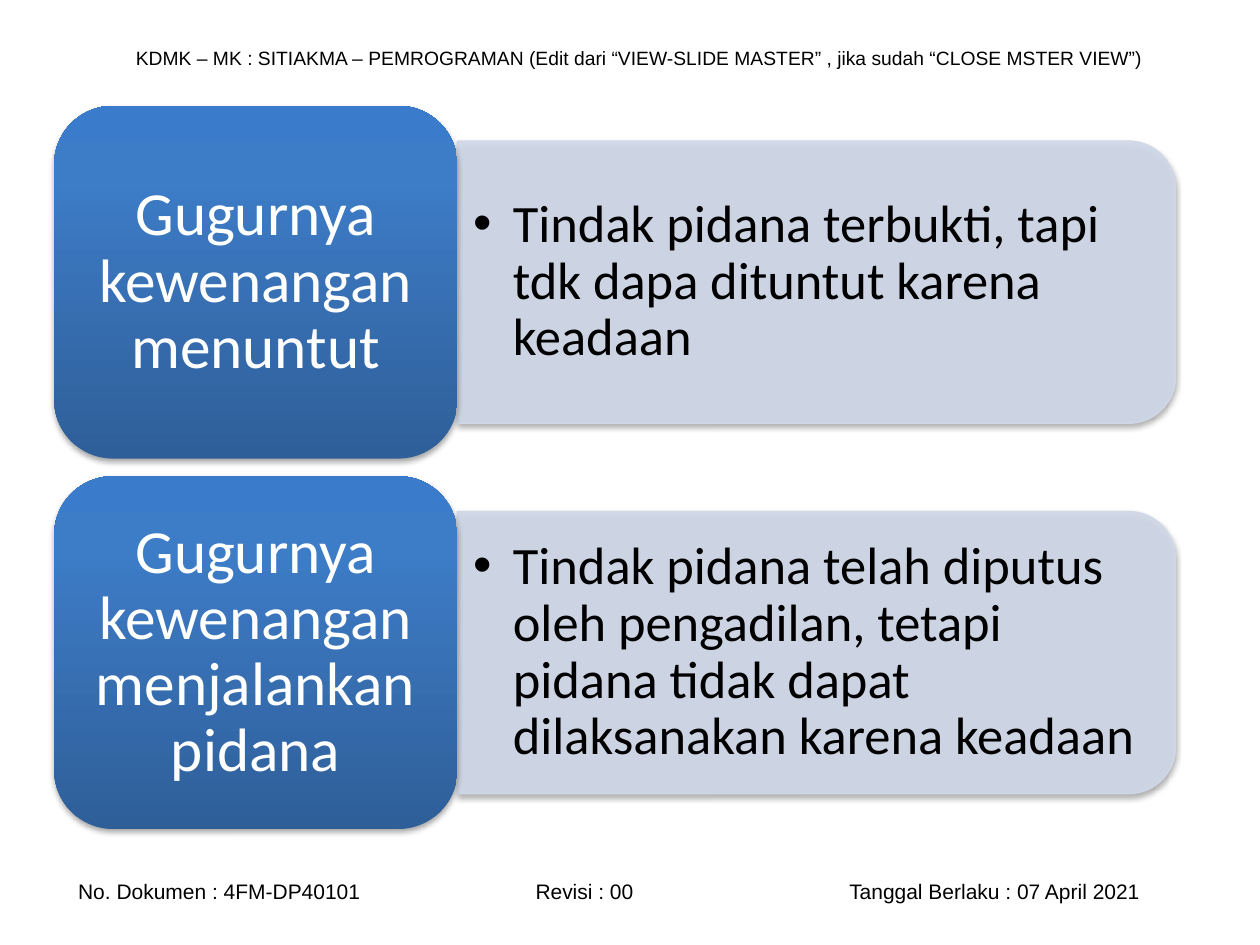
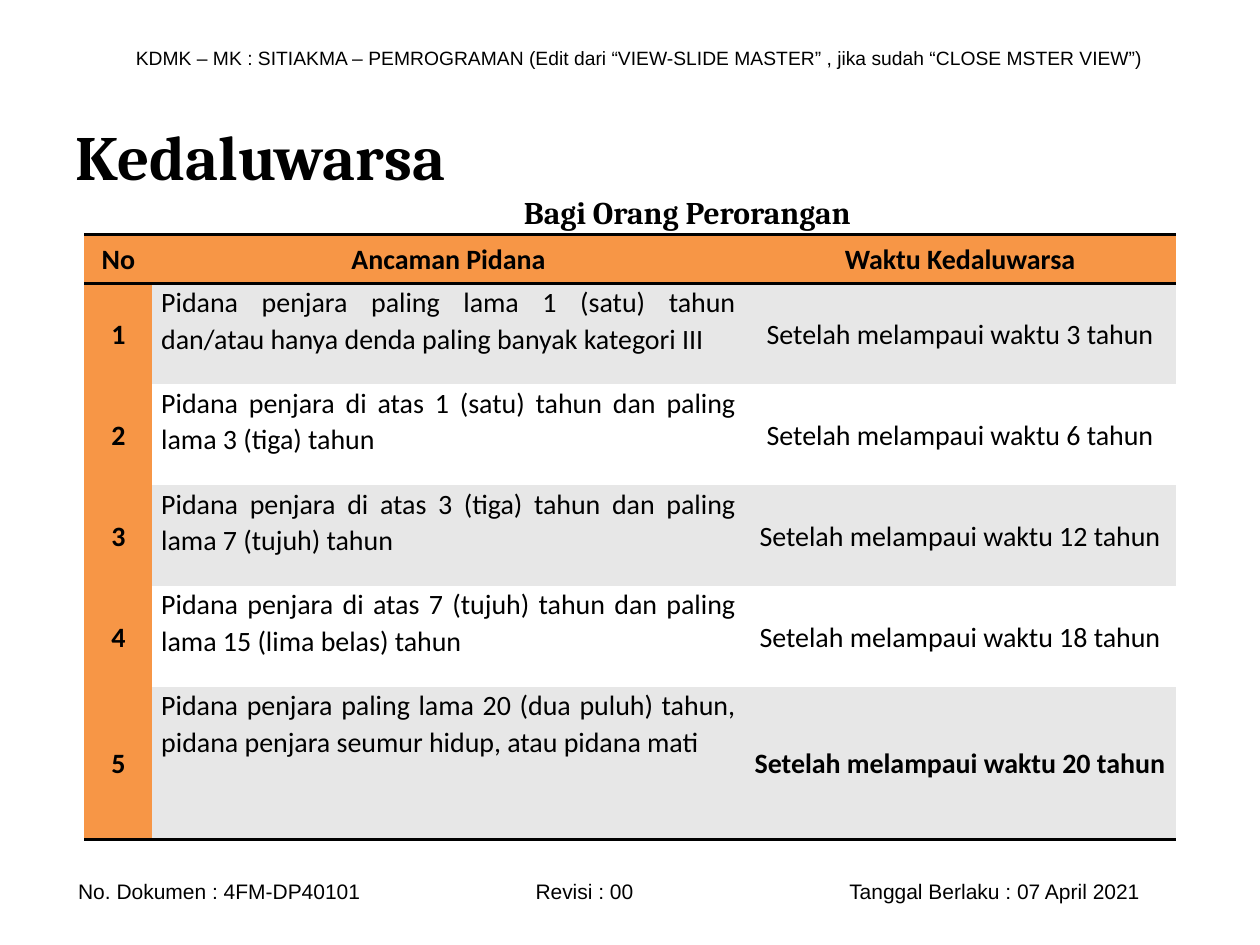
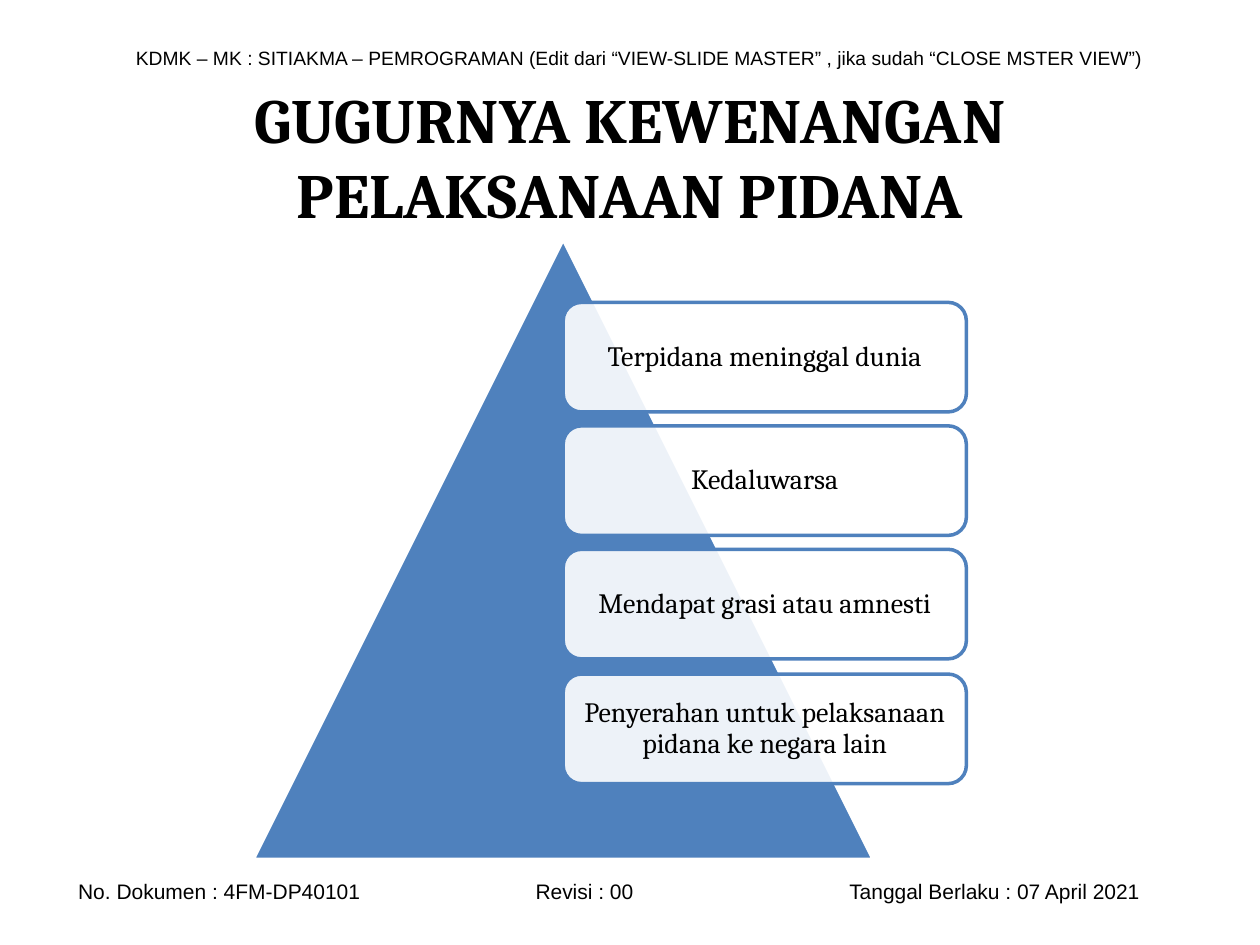
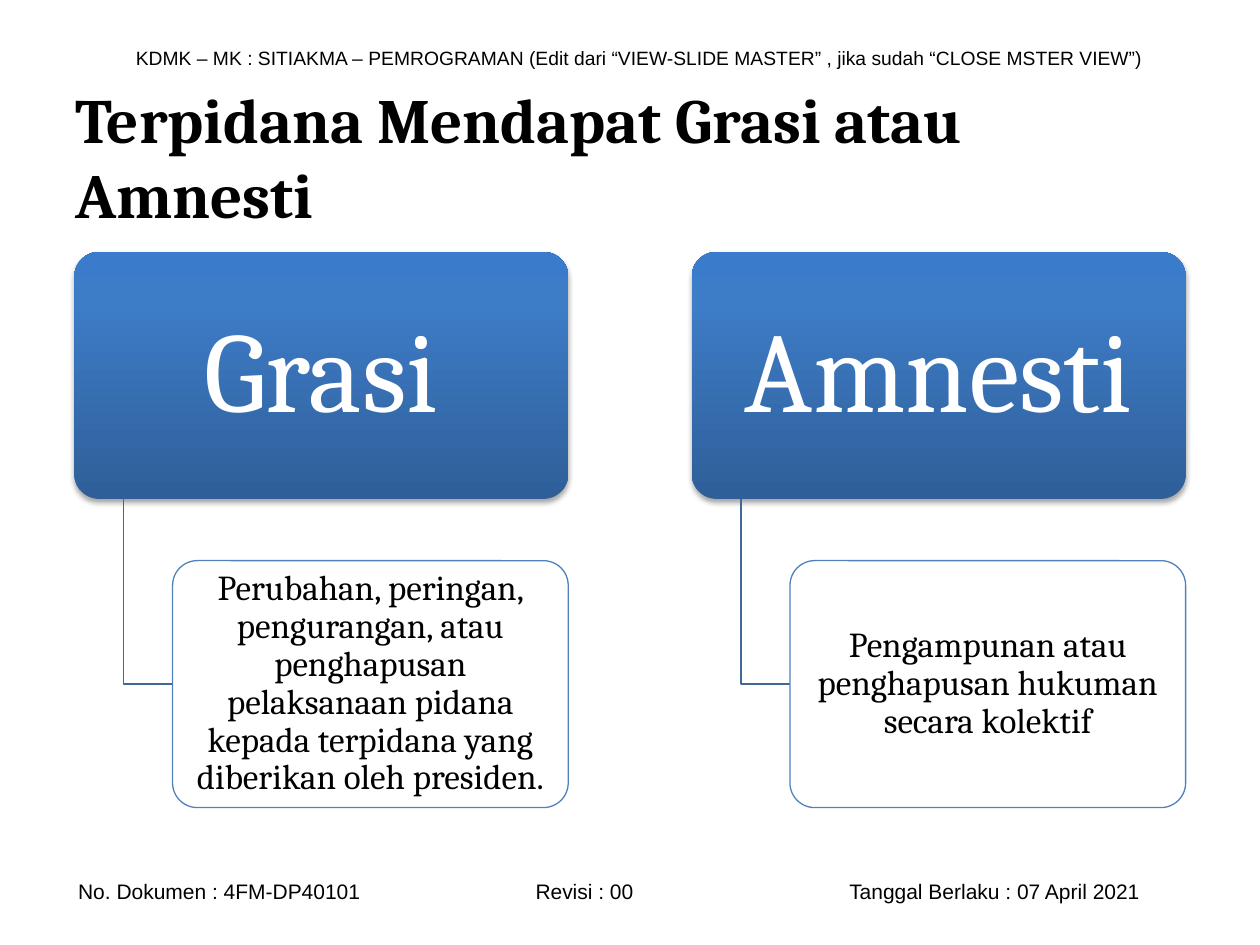
from copy import deepcopy

from lxml import etree
from pptx import Presentation
from pptx import util as u
from pptx.dml.color import RGBColor
from pptx.enum import shapes, text
from pptx.oxml.ns import qn

EMU_PER_PX = 9144
BLACK, WHITE, BLUE, PALE = "000000", "FFFFFF", "4F81BD", "D0D8E8"
ELBOW_BLUE, ORANGE, GREY = "3F6797", "F79646", "E7E7E7"
GRADIENT = ((0, "2F5F99"), (0.8, "3D7CC7"), (1, "3A7CCB"))
NO_STYLE = "{2D5ABB26-0587-4C30-8999-92F81FD0307C}"
LEFT, CENTER, JUSTIFY = text.PP_ALIGN.LEFT, text.PP_ALIGN.CENTER, text.PP_ALIGN.JUSTIFY
MIDDLE, TOP = text.MSO_ANCHOR.MIDDLE, text.MSO_ANCHOR.TOP
ROUNDED = shapes.MSO_SHAPE.ROUNDED_RECTANGLE
TITLE = {"size": 36, "name": "Cambria", "bold": True}

HEADER = "KDMK – MK : SITIAKMA – PEMROGRAMAN (Edit dari “VIEW-SLIDE MASTER” , jika sudah “CLOSE MSTER VIEW”)"
FOOTER = ("No. Dokumen : 4FM-DP40101", "Revisi : 00", "Tanggal Berlaku : 07 April 2021")
FOOTER_TABS = (363, 612)

AUTHORITIES = (
    ("Gugurnya kewenangan menuntut",
     "Tindak pidana terbukti, tapi tdk dapa dituntut karena keadaan"),
    ("Gugurnya kewenangan menjalankan pidana",
     "Tindak pidana telah diputus oleh pengadilan, tetapi pidana tidak dapat dilaksanakan karena keadaan"),
)
EXPIRY_HEADINGS = ("No", "Ancaman Pidana", "Waktu Kedaluwarsa")
EXPIRY_TERMS = (
    ("Pidana penjara paling lama 1 (satu) tahun dan/atau hanya denda paling banyak kategori III", 3),
    ("Pidana penjara di atas 1 (satu) tahun dan paling lama 3 (tiga) tahun", 6),
    ("Pidana penjara di atas 3 (tiga) tahun dan paling lama 7 (tujuh) tahun", 12),
    ("Pidana penjara di atas 7 (tujuh) tahun dan paling lama 15 (lima belas) tahun", 18),
    ("Pidana penjara paling lama 20 (dua puluh) tahun, pidana penjara seumur hidup, atau pidana mati", 20),
)
GROUNDS = ("Terpidana meninggal dunia", "Kedaluwarsa", "Mendapat grasi atau amnesti",
           "Penyerahan untuk pelaksanaan pidana ke negara lain")
PARDONS = (
    ("Grasi", "Perubahan, peringan, pengurangan, atau penghapusan pelaksanaan pidana "
              "kepada terpidana yang diberikan oleh presiden."),
    ("Amnesti", "Pengampunan atau penghapusan hukuman secara kolektif"),
)


def px(value):
    return u.Emu(value * EMU_PER_PX)


def rgb(color):
    return RGBColor.from_string(color)


def add_element(parent, tag, **attributes):
    return etree.SubElement(parent, qn(tag), {key: str(value) for key, value in attributes.items()})


def write_text(target, words, font, color=BLACK, align=LEFT, anchor=MIDDLE, insets=(10, 5, 10, 5), spacing=None):
    frame = getattr(target, "text_frame", target)
    frame.word_wrap = True
    target.vertical_anchor = anchor
    for side, inset in zip(("left", "top", "right", "bottom"), insets):
        setattr(target, f"margin_{side}", px(inset))
    paragraph = frame.paragraphs[0]
    for name, value in {"alignment": align, **(spacing or {})}.items():
        setattr(paragraph, name, value)
    run = paragraph.add_run()
    run.text = words
    for name, value in {**font, "size": u.Pt(font["size"])}.items():
        setattr(run.font, name, value)
    run.font.color.rgb = rgb(color)
    return paragraph


def add_text(slide, box, words, font, **layout):
    shape = slide.shapes.add_textbox(*map(px, box))
    paragraph = write_text(shape.text_frame, words, font, **layout)
    return shape, paragraph


def set_line(shape, color, width):
    if color is None:
        shape.line.fill.background()
    else:
        shape.line.color.rgb = rgb(color)
        shape.line.width = u.Pt(width)


def add_preset(slide, kind, box, fill, line=None, width=0.75, alpha=None):
    shape = slide.shapes.add_shape(kind, *map(px, box))
    shape.shadow.inherit = False
    shape.fill.solid()
    shape.fill.fore_color.rgb = rgb(fill)
    if alpha:
        add_element(shape.element.spPr.find(qn("a:solidFill"))[0], "a:alpha", val=alpha * 1000)
    set_line(shape, line, width)
    return shape


def add_shadow(shape):
    effects = shape.element.spPr.find(qn("a:effectLst"))
    shadow = add_element(effects, "a:outerShdw", blurRad=40000, dist=23000, dir=5400000, rotWithShape=0)
    add_element(add_element(shadow, "a:srgbClr", val=BLACK), "a:alpha", val=35000)


def add_glossy_box(slide, box, words, font, insets):
    shape = add_preset(slide, ROUNDED, box, BLUE)
    shape.fill.gradient()
    shape.fill.gradient_angle = 90
    stop_list = shape.element.spPr.find(f".//{qn('a:gsLst')}")
    stop_list.append(deepcopy(stop_list[0]))
    for stop, (position, color) in zip(shape.fill.gradient_stops, GRADIENT):
        stop.position = position
        stop.color.rgb = rgb(color)
    add_shadow(shape)
    write_text(shape.text_frame, words, font, color=WHITE, align=CENTER, insets=insets,
               spacing={"line_spacing": 0.9})
    return shape


def add_outlined_box(slide, box, words, size, width, insets):
    shape = add_preset(slide, ROUNDED, box, WHITE, BLUE, width, alpha=90)
    write_text(shape.text_frame, words, {"size": size, "name": "Cambria"}, align=CENTER, insets=insets,
               spacing={"line_spacing": 0.9})
    return shape


def add_title(slide, words, align=LEFT):
    add_text(slide, (50, 61, 900, 125), words, TITLE, align=align)


def add_page_bands(slide, layout):
    header, _ = add_text(slide, (98, 31, 835, 29), HEADER, {"size": 11, "name": "Arial"})
    footer, paragraph = add_text(slide, (20, 692, 945, 30), "\t".join(FOOTER), {"size": 12, "name": "Arial"},
                                 insets=(42, 5, 10, 5))
    tabs = add_element(paragraph._p.get_or_add_pPr(), "a:tabLst")
    for position in FOOTER_TABS:
        add_element(tabs, "a:tab", pos=px(position), algn="l")
    for band in (header, footer):
        layout.shapes.element.append(band.element)


def add_authority(slide, left, top, name, meaning):
    bar_left, bar_top, bar_width, bar_height = left + 320, top + 28, 570, 224
    shift = (bar_width - bar_height) // 2
    bar = add_preset(slide, shapes.MSO_SHAPE.ROUND_2_SAME_RECTANGLE,
                     (bar_left + shift, bar_top - shift, bar_height, bar_width), PALE, PALE, alpha=90)
    bar.rotation = 90
    add_shadow(bar)
    _, paragraph = add_text(slide, (bar_left + 1, bar_top + 11, 559, 202), meaning,
                            {"size": 30, "name": "Calibri"}, insets=(12, 6, 12, 6),
                            spacing={"line_spacing": 0.9})
    properties = paragraph._p.get_or_add_pPr()
    properties.set("marL", str(px(31)))
    properties.set("indent", str(px(-31)))
    add_element(properties, "a:buFont", typeface="Arial")
    add_element(properties, "a:buChar", char="•")
    add_glossy_box(slide, (left, top, 320, 280), name, {"size": 35, "name": "Calibri"}, (15, 7, 15, 7))


def build_authorities(slide):
    for index, (name, meaning) in enumerate(AUTHORITIES):
        add_authority(slide, 43, 84 + 294 * index, name, meaning)


def format_cell(cell, words, fill, bold, borders, align=CENTER, anchor=MIDDLE):
    write_text(cell, words, {"size": 16, "name": "Calibri", "bold": bold}, align=align, anchor=anchor,
               insets=(7, 0, 7, 0), spacing={"line_spacing": 1.07, "space_after": u.Pt(8)})
    properties = cell._tc.get_or_add_tcPr()
    for tag in borders:
        border = add_element(properties, tag, w=u.Pt(2))
        add_element(add_element(border, "a:solidFill"), "a:srgbClr", val=BLACK)
    cell.fill.solid()
    cell.fill.fore_color.rgb = rgb(fill)


def add_expiry_table(slide, left, top):
    widths, heights = (54, 470, 342), (39, 80, 80, 80, 80, 121)
    frame = slide.shapes.add_table(len(heights), len(widths),
                                   *map(px, (left, top, sum(widths), sum(heights))))
    table = frame.table
    frame.element.find(f".//{qn('a:tableStyleId')}").text = NO_STYLE
    for column, width in zip(table.columns, widths):
        column.width = px(width)
    for row, height in zip(table.rows, heights):
        row.height = px(height)
    for column, heading in enumerate(EXPIRY_HEADINGS):
        format_cell(table.cell(0, column), heading, ORANGE, True, ("a:lnT", "a:lnB"))
    for number, (threat, years) in enumerate(EXPIRY_TERMS, 1):
        last = number == len(EXPIRY_TERMS)
        borders = ("a:lnB",) if last else ()
        fill = GREY if number % 2 else WHITE
        format_cell(table.cell(number, 0), str(number), ORANGE, True, borders)
        format_cell(table.cell(number, 1), threat, fill, False, borders, JUSTIFY, TOP)
        format_cell(table.cell(number, 2), f"Setelah melampaui waktu {years} tahun", fill, last, borders)


def build_expiry(slide):
    add_title(slide, "Kedaluwarsa")
    add_expiry_table(slide, 67, 186)
    add_text(slide, (406, 148, 291, 40), "Bagi Orang Perorangan", {**TITLE, "size": 18}, anchor=TOP)


def add_pyramid(slide, left, top, side):
    add_preset(slide, shapes.MSO_SHAPE.ISOSCELES_TRIANGLE, (left, top, side, side), BLUE, WHITE, 2)
    for index, ground in enumerate(GROUNDS):
        box = (left + side // 2, top + 50 + 295 * index // 3, 320, 87)
        add_outlined_box(slide, box, ground, 16, 2, (7, 7, 7, 7))


def build_grounds(slide):
    add_title(slide, "GUGURNYA KEWENANGAN PELAKSANAAN PIDANA", CENTER)
    add_pyramid(slide, 201, 190, 492)


def add_pardon(slide, left, top, name, meaning):
    width, height, step = 392, 196, 39
    detail_left, detail_top = left + 2 * step, top + 245
    heading = add_glossy_box(slide, (left, top, width, height), name,
                             {"size": 65, "name": "Cambria"}, (14, 9, 14, 9))
    corner_y = detail_top + height // 2
    builder = slide.shapes.build_freeform(px(left + step), px(top + height))
    builder.add_line_segments([(px(left + step), px(corner_y)), (px(detail_left), px(corner_y))], close=False)
    elbow = builder.convert_to_shape()
    elbow.shadow.inherit = False
    elbow.fill.background()
    set_line(elbow, ELBOW_BLUE, 0.75)
    detail = add_outlined_box(slide, (detail_left, detail_top, width - 2 * step, height), meaning,
                              20, 0.75, (4, 3, 4, 3))
    for shape in (heading, detail):
        shape.adjustments[0] = 0.1


def build_pardons(slide):
    add_title(slide, "Terpidana Mendapat Grasi atau Amnesti")
    for index, (name, meaning) in enumerate(PARDONS):
        add_pardon(slide, 59 + 490 * index, 200, name, meaning)


def main():
    presentation = Presentation()
    presentation.slide_width, presentation.slide_height = px(1000), px(750)
    blank = presentation.slide_layouts[6]
    builders = (build_authorities, build_expiry, build_grounds, build_pardons)
    slides = [presentation.slides.add_slide(blank) for _ in builders]
    add_page_bands(slides[0], blank)
    for build, slide in zip(builders, slides):
        build(slide)
    presentation.save("out.pptx")


if __name__ == "__main__":
    main()
